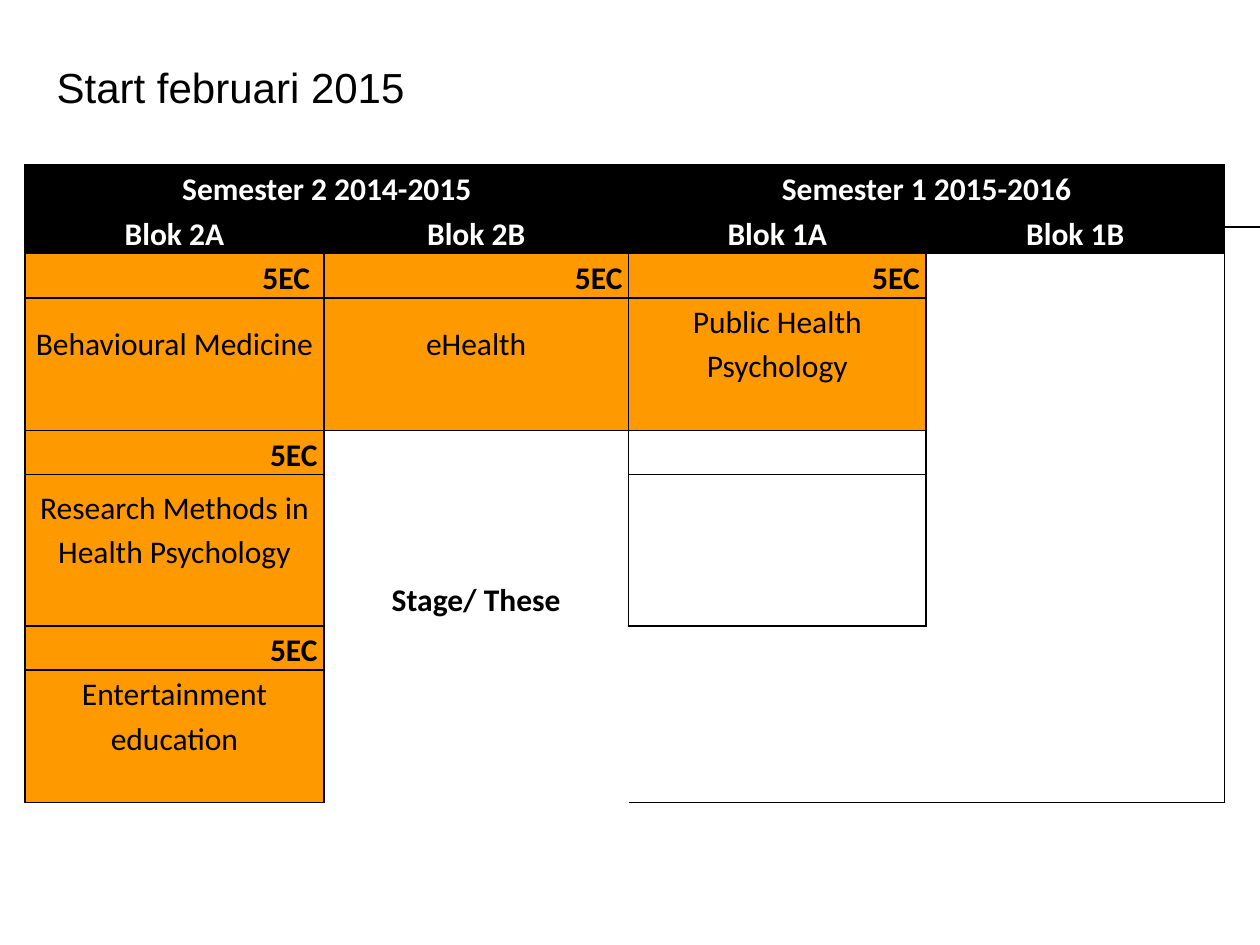
from dataclasses import dataclass

from lxml.etree import SubElement
from pptx import Presentation
from pptx.dml.color import RGBColor
from pptx.enum.shapes import MSO_CONNECTOR
from pptx.enum.text import MSO_ANCHOR, PP_ALIGN
from pptx.oxml.ns import qn
from pptx.util import Inches, Pt


@dataclass(frozen=True)
class Theme:
    black: RGBColor = RGBColor(0, 0, 0)
    white: RGBColor = RGBColor(255, 255, 255)
    orange: RGBColor = RGBColor(0xFF, 0x99, 0)
    head_font: str = "Arial"
    body_font: str = "Calibri"
    head_size: int = 24
    body_size: int = 18
    line: int = 1
    spacing: float = 1.15


class Deck:
    def __init__(self, theme):
        self.theme = theme
        self.file = Presentation()
        self.file.slide_width, self.file.slide_height = Inches(10), Inches(7.5)
        self.slide = self.file.slides.add_slide(self.file.slide_layouts[5])

    def style(self, run, font, size, color, bold=False):
        run.font.name, run.font.size, run.font.bold = font, Pt(size), bold
        run.font.color.rgb = color

    def title(self, text, left, top, width, height):
        box = self.slide.shapes.title
        box.left, box.top = Inches(left), Inches(top)
        box.width, box.height = Inches(width), Inches(height)
        box.text_frame.vertical_anchor = MSO_ANCHOR.MIDDLE
        para = box.text_frame.paragraphs[0]
        para.alignment = PP_ALIGN.LEFT
        run = para.add_run()
        run.text = text
        self.style(run, self.theme.head_font, self.theme.head_size, self.theme.black)

    def rule(self, left, right, top):
        line = self.slide.shapes.add_connector(
            MSO_CONNECTOR.STRAIGHT, Inches(left), Inches(top), Inches(right), Inches(top))
        line.line.color.rgb = self.theme.black
        line.line.width = Pt(self.theme.line)
        SubElement(line._element.spPr, qn("a:effectLst"))

    def table(self, left, top, cols, rows):
        frame = self.slide.shapes.add_table(
            len(rows), len(cols), Inches(left), Inches(top),
            Inches(sum(cols)), Inches(sum(rows)))
        grid = frame.table
        grid.first_row = grid.horz_banding = False
        # Plain table style: no fill and no grid
        grid._tbl.tblPr.find(qn("a:tableStyleId")).text = (
            "{2D5ABB26-0587-4C30-8999-92F81FD0307C}")
        for col, width in zip(grid.columns, cols):
            col.width = Inches(width)
        for row, height in zip(grid.rows, rows):
            row.height = Inches(height)
        for cell in grid.iter_cells():
            cell.margin_left = cell.margin_right = Inches(0.05)
            cell.margin_top = cell.margin_bottom = 0
        return grid

    def text(self, cell, words, color, bold=False,
             align=PP_ALIGN.CENTER, anchor=MSO_ANCHOR.MIDDLE):
        cell.vertical_anchor = anchor
        para = cell.text_frame.paragraphs[0]
        para.alignment, para.line_spacing = align, self.theme.spacing
        run = para.add_run()
        run.text = words
        self.style(run, self.theme.body_font, self.theme.body_size, color, bold)

    def border(self, cell, sides):
        props = cell._tc.get_or_add_tcPr()
        for side in "LRTB":
            if side in sides:
                line = SubElement(props, qn(f"a:ln{side}"), w=str(Pt(self.theme.line)))
                fill = SubElement(line, qn("a:solidFill"))
                SubElement(fill, qn("a:srgbClr"), val=str(self.theme.black))

    def fill(self, cell, color):
        cell.fill.solid()
        cell.fill.fore_color.rgb = color


def outline(top, left, bottom, right):
    """Yield each cell of a block with the sides it has on the edge."""
    for row in range(top, bottom + 1):
        for col in range(left, right + 1):
            tests = {"L": col == left, "R": col == right,
                     "T": row == top, "B": row == bottom}
            yield (row, col), {side for side, hit in tests.items() if hit}


TERMS = ["Semester 2 2014-2015", "Semester 1 2015-2016"]
BLOCKS = ["Blok 2A", "Blok 2B", "Blok 1A", "Blok 1B"]
# First row and column of each course
COURSES = {
    (2, 0): "Behavioural Medicine",
    (2, 1): "eHealth",
    (2, 2): "Public Health Psychology",
    (5, 0): "Research Methods in Health Psychology",
    (8, 0): "Entertainment education",
}
COLS = [2.37, 2.42, 2.36, 2.37]
ROWS = [0.35, 0.35] + [0.35, 0.69, 0.35] + [0.35, 0.85, 0.35] + [0.35, 0.69, 0.35]


def main():
    theme = Theme()
    deck = Deck(theme)
    deck.title("Start februari 2015", 0.35, 0.44, 7.17, 0.5)
    deck.rule(1.18, 10, 1.8)
    grid = deck.table(0.2, 1.31, COLS, ROWS)

    # Borders: the whole table, each course and the open block
    sides = {}
    areas = [(0, 0, len(ROWS) - 1, len(COLS) - 1), (0, 0, 1, 3)]
    areas += [(row, col, row + 2, col) for row, col in [*COURSES, (5, 2)]]
    for area in areas:
        for spot, edges in outline(*area):
            sides.setdefault(spot, set()).update(edges)
    for spot, edges in sides.items():
        deck.border(grid.cell(*spot), edges)

    # Header rows
    for col, block in enumerate(BLOCKS):
        for row in (0, 1):
            deck.fill(grid.cell(row, col), theme.black)
        deck.text(grid.cell(1, col), block, theme.white, True)
    for i, term in enumerate(TERMS):
        cell = grid.cell(0, 2 * i)
        cell.merge(grid.cell(0, 2 * i + 1))
        deck.text(cell, term, theme.white, True, anchor=MSO_ANCHOR.BOTTOM)

    # Courses: points on top, name below
    for (row, col), course in COURSES.items():
        for step in range(3):
            deck.fill(grid.cell(row + step, col), theme.orange)
        deck.text(grid.cell(row, col), "5EC", theme.black, True,
                  PP_ALIGN.RIGHT, MSO_ANCHOR.BOTTOM)
        deck.text(grid.cell(row + 1, col), course, theme.black)
    grid.cell(2, 0).margin_right = Inches(0.11)

    # Thesis area
    for row in (5, 8):
        grid.cell(row, 1).merge(grid.cell(row + 2, 1))
    stage = grid.cell(5, 1)
    stage.margin_bottom = Inches(0.05)
    deck.text(stage, "Stage/ These", theme.black, True, anchor=MSO_ANCHOR.BOTTOM)

    deck.file.save("out.pptx")


if __name__ == "__main__":
    main()
